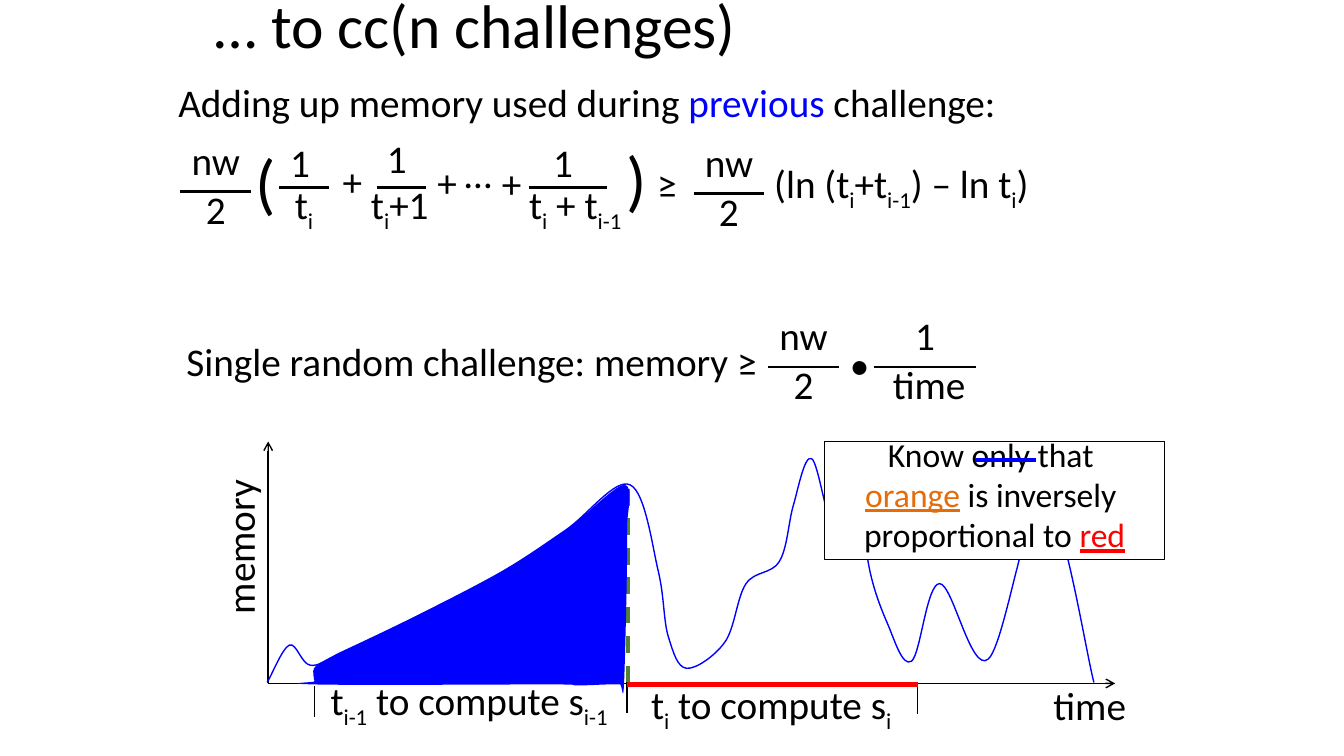
from dataclasses import dataclass
from lxml.etree import SubElement
from pptx import Presentation
from pptx.dml.color import RGBColor
from pptx.enum.dml import MSO_LINE_DASH_STYLE as Dash
from pptx.enum.shapes import MSO_CONNECTOR as Connector, MSO_SHAPE as Shape
from pptx.enum.text import MSO_ANCHOR as Anchor, MSO_AUTO_SIZE as AutoSize, PP_ALIGN as Align
from pptx.oxml.ns import qn
from pptx.util import Pt

PX = 9144


@dataclass(frozen=True)
class Theme:
    font: str = "Calibri"
    black: str = "000000"
    white: str = "FFFFFF"
    blue: str = "0000FF"
    red: str = "FF0000"
    orange: str = "E46C0A"
    green: str = "548235"
    title: int = 44
    paren: int = 48
    body: int = 28
    note: int = 24
    thin: float = 1
    bar: float = 1.5
    thick: float = 3


@dataclass(frozen=True)
class Fraction:
    top: str
    bottom: str
    x: int
    bar_y: int
    width: int
    top_shift: int = 0
    bottom_shift: int = 0
    rise: int = 60
    drop: int = 11


THEME = Theme()
SLIDE_SIZE = (1333, 750)
LINE_HEIGHT = 57

TITLE = "… to cc(n challenges)"
TITLE_PLACE = (203, -34, 950, 125)
HEADING = [("Adding up memory used during ", THEME.black),
           ("previous", THEME.blue), (" challenge:", THEME.black)]
HEADING_PLACE = (167, 78, 919, 72)

LABELS = [
    ("Single random challenge: memory ≥", 175, 330, 668, {}),
    ("time", 1035, 671, 93, {}),
    ("memory", 160, 513, 155, {"rotation": 270}),
    ("t{i} to compute s{i}", 636, 675, 270, {"spacing": 0.8}),
    ("t{i-1} to compute s{i-1}", 318, 671, 323, {"spacing": 0.8}),
    ("(", 244, 134, 75, {"size": THEME.paren}),
    (")", 612, 131, 75, {"size": THEME.paren}),
    ("+", 330, 151, 48, {}),
    ("+", 424, 152, 48, {}),
    ("…", 451, 143, 48, {}),
    ("+", 488, 153, 48, {}),
    ("≥", 642, 153, 48, {}),
    ("(ln (t{i}+t{i-1}) – ln t{i})", 758, 153, 284, {}),
    ("•", 833, 333, 48, {}),
]

FRACTIONS = [
    Fraction("nw", "2", 179, 190, 70),
    Fraction("1", "t{i}", 277, 186, 49, top_shift=-4, rise=54, drop=12),
    Fraction("1", "t{i}+1", 374, 186, 49, top_shift=-5, bottom_shift=-2, rise=58, drop=12),
    Fraction("1", "t{i} + t{i-1}", 525, 186, 77, top_shift=-5, bottom_shift=7, rise=54, drop=12),
    Fraction("nw", "2", 688, 192, 70),
    Fraction("nw", "2", 762, 364, 70),
    Fraction("1", "time", 867, 364, 101, bottom_shift=4),
]

NOTE_PLACE = (818, 438, 337, 117)
NOTE = [("Know only that ", THEME.black), ("\n", THEME.black),
        ("orange", THEME.orange), (" is inversely ", THEME.black), ("\n", THEME.black),
        ("proportional to ", THEME.black), ("red", THEME.red)]
UNDERLINED = ("orange", "red")
STRIKE = (967, 456, 1028, 456)

ORIGIN_X, AXIS_Y = 266, 678
TIME_END, MEMORY_END = 1106, 438
PREVIOUS_START, CHALLENGE_START, CHALLENGE_END = 312, 622, 910
PEAK_Y = 479
TICK = 30
AXES = [(ORIGIN_X, AXIS_Y, TIME_END, AXIS_Y), (ORIGIN_X, AXIS_Y, ORIGIN_X, MEMORY_END)]
TICKS = [(PREVIOUS_START, 681), (CHALLENGE_START, 677), (CHALLENGE_END, AXIS_Y)]

FIRST_BUMP = [(265, 677), (287, 640), (308, 660)]
RISE = [(339, 647), (410, 613), (493, 570), (561, 526)]
LATER_WAVES = [
    (625, 481), (653, 567), (663, 632), (681, 663), (719, 637), (740, 579),
    (773, 557), (787, 501), (805, 455), (828, 525), (855, 472), (861, 557),
    (880, 618), (904, 656), (932, 579), (980, 654), (1036, 496), (1085, 677),
]
RIGHT_EDGE = [(619, 481), (622, 520), (622, 533), (622, 546), (619, 678)]
BASE = [(615, 679), (605, 679), (573, 680), (541, 679), (311, 679)]
LEFT_EDGE = [(312, 676), (311, 671), (314, 660), (339, 647)]
MEMORY_CURVE = FIRST_BUMP + RISE + LATER_WAVES
MEMORY_AREA = RISE + RIGHT_EDGE + BASE + LEFT_EDGE


def emu(*lengths):
    return [length * PX for length in lengths]


def apply(target, values):
    for name, value in values.items():
        setattr(target, name, value)


def write(frame, spans, size=THEME.body, align=Align.LEFT, spacing=None, anchor=Anchor.TOP, wrap=True):
    apply(frame, {"word_wrap": wrap, "vertical_anchor": anchor, "auto_size": AutoSize.NONE})
    para = frame.paragraphs[0]
    apply(para, {"alignment": align, "line_spacing": spacing})
    for text, color in spans:
        if text == "\n":
            para.add_line_break()
            continue
        for index, piece in enumerate(text.replace("}", "{").split("{")):
            if not piece:
                continue
            span = para.add_run()
            span.text = piece
            apply(span.font, {"name": THEME.font, "size": Pt(size), "underline": text in UNDERLINED})
            span.font.color.rgb = RGBColor.from_string(color)
            is_subscript = index % 2 == 1
            if is_subscript:
                span.font._element.set("baseline", "-25000")


def add_text(page, spans, place, rotation=0, **style):
    box = page.shapes.add_textbox(*emu(*place))
    box.rotation = rotation
    if isinstance(spans, str):
        spans = [(spans, THEME.black)]
    write(box.text_frame, spans, **style)


def add_line(page, ends, color=THEME.black, width=THEME.thin, dash=None, arrow=False):
    connector = page.shapes.add_connector(Connector.STRAIGHT, *emu(*ends))
    connector.line.color.rgb = RGBColor.from_string(color)
    apply(connector.line, {"width": Pt(width), "dash_style": dash})
    if arrow:
        SubElement(connector.line._get_or_add_ln(), qn("a:tailEnd"), type="arrow")
    SubElement(connector._element.spPr, qn("a:effectLst"))


def add_fraction(page, fraction):
    x, bar_y, width = fraction.x, fraction.bar_y, fraction.width
    for text, shift, y in ((fraction.top, fraction.top_shift, bar_y - fraction.rise),
                           (fraction.bottom, fraction.bottom_shift, bar_y - fraction.drop)):
        add_text(page, text, (x + shift, y, width, LINE_HEIGHT), align=Align.CENTER, wrap=False)
    add_line(page, (x, bar_y, x + width, bar_y), width=THEME.bar)


def paint(shape, fill=None, line=None, width=THEME.thin):
    shape.shadow.inherit = False
    for part, color in ((shape.fill, fill), (shape.line.fill, line)):
        if color:
            part.solid()
            part.fore_color.rgb = RGBColor.from_string(color)
        else:
            part.background()
    if line:
        shape.line.width = Pt(width)


def spline(points):
    padded = [points[0], *points, points[-1]]
    for before, start, end, after in zip(padded, padded[1:], padded[2:], padded[3:]):
        leave = [round(s + (e - b) / 6) for b, s, e in zip(before, start, end)]
        arrive = [round(e - (a - s) / 6) for s, e, a in zip(start, end, after)]
        yield leave, arrive, end


def add_smooth_shape(page, points, closed=False, **colors):
    builder = page.shapes.build_freeform(*points[0], scale=PX)
    builder.add_line_segments(points[1:], close=closed)
    shape = builder.convert_to_shape()
    left, top = map(min, zip(*points))
    for straight, controls in zip(list(shape._element.iter(qn("a:lnTo"))), spline(points)):
        bezier = straight.makeelement(qn("a:cubicBezTo"), {})
        for x, y in controls:
            SubElement(bezier, qn("a:pt"), x=str(x - left), y=str(y - top))
        straight.getparent().replace(straight, bezier)
    paint(shape, **colors)


def add_memory_chart(page):
    for axis in AXES:
        add_line(page, axis, arrow=True)
    for x, y in TICKS:
        add_line(page, (x, y + TICK, x, y))
    add_line(page, (CHALLENGE_START + 1, AXIS_Y - 1, CHALLENGE_START + 1, PEAK_Y),
             color=THEME.green, width=THEME.thick, dash=Dash.DASH)
    add_line(page, (CHALLENGE_START, AXIS_Y + 1, CHALLENGE_END, AXIS_Y + 1),
             color=THEME.red, width=THEME.thick)
    add_smooth_shape(page, MEMORY_CURVE, line=THEME.blue)
    add_smooth_shape(page, MEMORY_AREA, closed=True, fill=THEME.blue)


def add_note(page):
    note = page.shapes.add_shape(Shape.RECTANGLE, *emu(*NOTE_PLACE))
    paint(note, THEME.white, THEME.black, THEME.thin / 2)
    write(note.text_frame, NOTE, THEME.note, Align.CENTER, anchor=Anchor.BOTTOM)
    add_line(page, STRIKE, color=THEME.blue, width=THEME.thick)


def main():
    deck = Presentation()
    deck.slide_width, deck.slide_height = emu(*SLIDE_SIZE)
    page = deck.slides.add_slide(deck.slide_layouts[5])
    title = page.shapes.title
    apply(title, dict(zip(("left", "top", "width", "height"), emu(*TITLE_PLACE))))
    write(title.text_frame, [(TITLE, THEME.black)], THEME.title, spacing=0.9, anchor=Anchor.MIDDLE)
    add_text(page, HEADING, HEADING_PLACE, spacing=0.9)
    for text, x, y, width, style in LABELS:
        add_text(page, text, (x, y, width, LINE_HEIGHT), **style)
    for fraction in FRACTIONS:
        add_fraction(page, fraction)
    add_memory_chart(page)
    add_note(page)
    deck.save("out.pptx")


if __name__ == "__main__":
    main()
